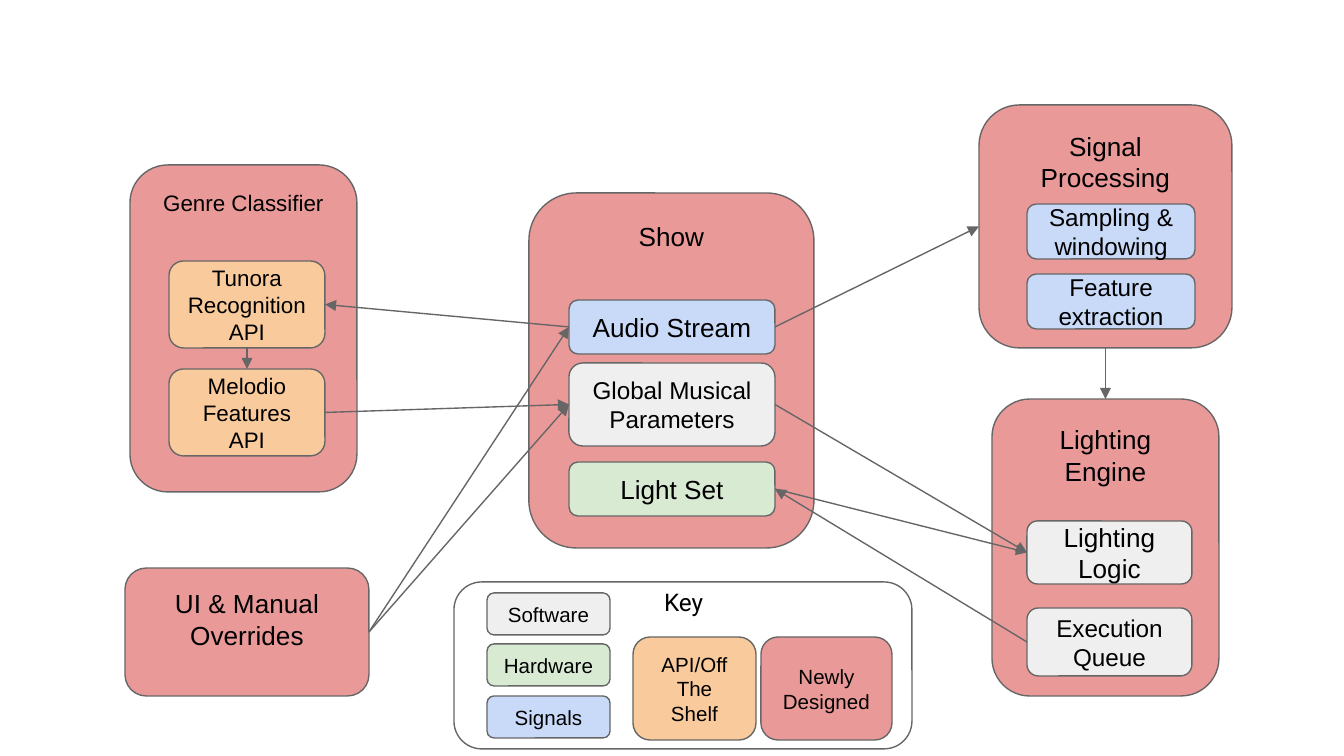
from lxml import etree
from pptx import Presentation
from pptx import util as u
from pptx.dml.color import RGBColor
from pptx.enum import shapes, text
from pptx.oxml.ns import qn

SCALE = 914400 / 134.4
TOP, LEFT, BOTTOM, RIGHT = range(4)
NEW, API, SOFTWARE, SIGNAL, HARDWARE = "EA9999", "F9CB9C", "EFEFEF", "C9DAF8", "D9EAD3"


def px(length):
    return u.Emu(round(length * SCALE))


def color(hex_string):
    return RGBColor.from_string(hex_string)


class Diagram:
    stroke = "666666"
    ink = "000000"
    weight = u.Pt(0.75)
    inset = u.Inches(0.1)

    def __init__(self, slide):
        self.slide = slide

    def outline(self, line):
        line.color.rgb = color(self.stroke)
        line.width = self.weight

    def set_words(self, shape, words, size, anchor, font="Arial"):
        frame = shape.text_frame
        frame_format = {"word_wrap": True, "vertical_anchor": anchor}
        for side in ("left", "top", "right", "bottom"):
            frame_format[f"margin_{side}"] = self.inset
        for name, value in frame_format.items():
            setattr(frame, name, value)
        paragraph = frame.paragraphs[0]
        paragraph.alignment = text.PP_ALIGN.CENTER
        run = paragraph.add_run()
        run.text = words
        for name, value in {"name": font, "size": u.Pt(size)}.items():
            setattr(run.font, name, value)
        run.font.color.rgb = color(self.ink)

    def box(self, place, fill=None, words="", size=14,
            anchor=text.MSO_ANCHOR.MIDDLE, parent=None):
        shape = (parent or self.slide).shapes.add_shape(
            shapes.MSO_SHAPE.ROUNDED_RECTANGLE, *map(px, place))
        shape.shadow.inherit = False
        if fill:
            shape.fill.solid()
            shape.fill.fore_color.rgb = color(fill)
        else:
            shape.fill.background()
        self.outline(shape.line)
        if words:
            self.set_words(shape, words, size, anchor)
        return shape

    def module(self, place, title, size, parts):
        group = self.slide.shapes.add_group_shape()
        panel = self.box(place, NEW, title, size, text.MSO_ANCHOR.TOP, group)
        return [panel] + [self.box(*part, parent=group) for part in parts]

    def label(self, place, words, size, font):
        shape = self.slide.shapes.add_textbox(*map(px, place))
        self.set_words(shape, words, size, text.MSO_ANCHOR.TOP, font)

    def arrow(self, start, start_side, end, end_side):
        link = self.slide.shapes.add_connector(
            shapes.MSO_CONNECTOR.STRAIGHT, 0, 0, 0, 0)
        link.begin_connect(start, start_side)
        link.end_connect(end, end_side)
        self.outline(link.line)
        properties = link._element.spPr
        etree.SubElement(properties.find(qn("a:ln")), qn("a:tailEnd"), type="triangle")
        etree.SubElement(properties, qn("a:effectLst"))


def main():
    deck = Presentation()
    deck.slide_width, deck.slide_height = px(1344), px(756)
    diagram = Diagram(deck.slides.add_slide(deck.slide_layouts[6]))

    genre, recognition, features = diagram.module(
        (130, 165, 227, 327), "Genre Classifier", 12, [
            ((169, 261, 156, 87), API, "Tunora Recognition API", 12),
            ((169, 369, 156, 87), API, "Melodio Features API", 12)])
    engine, logic, queue = diagram.module(
        (992, 399, 227, 297), "Lighting Engine", 14, [
            ((1027, 521, 165, 63), SOFTWARE, "Lighting Logic", 14),
            ((1027, 608, 165, 68), SOFTWARE, "Execution Queue", 13)])
    show, parameters, audio, lights = diagram.module(
        (529, 193, 285, 355), "Show", 14, [
            ((569, 363, 206, 83), SOFTWARE, "Global Musical Parameters", 13),
            ((569, 300, 206, 54), SIGNAL, "Audio Stream", 14),
            ((569, 462, 206, 54), HARDWARE, "Light Set", 14)])
    processing, sampling, extraction = diagram.module(
        (979, 105, 253, 243), "Signal Processing", 14, [
            ((1027, 204, 168, 55), SIGNAL, "Sampling & windowing", 13),
            ((1027, 274, 168, 55), SIGNAL, "Feature extraction", 13)])
    overrides = diagram.box((125, 568, 244, 128), NEW, "UI & Manual Overrides",
                            14, text.MSO_ANCHOR.TOP)

    diagram.box((454, 582, 458, 167))
    basics = [(SOFTWARE, "Software"), (HARDWARE, "Hardware"), (SIGNAL, "Signals")]
    for row, (fill, name) in enumerate(basics):
        diagram.box((487, 593 + 103 * row // 2, 123, 42), fill, name, 11)
    diagram.box((633, 637, 123, 103), API, "API/Off The Shelf", 11)
    diagram.box((761, 637, 131, 103), NEW, "Newly Designed", 11)
    diagram.label((644, 574, 79, 56), "Key", 13, "Roboto")

    for flow in [
        (audio, LEFT, recognition, RIGHT),
        (recognition, BOTTOM, features, TOP),
        (features, RIGHT, parameters, LEFT),
        (parameters, RIGHT, logic, LEFT),
        (audio, RIGHT, processing, LEFT),
        (queue, LEFT, lights, RIGHT),
        (lights, RIGHT, logic, LEFT),
        (processing, BOTTOM, engine, TOP),
        (overrides, RIGHT, parameters, LEFT),
        (overrides, RIGHT, audio, LEFT),
    ]:
        diagram.arrow(*flow)

    deck.save("out.pptx")


if __name__ == "__main__":
    main()
